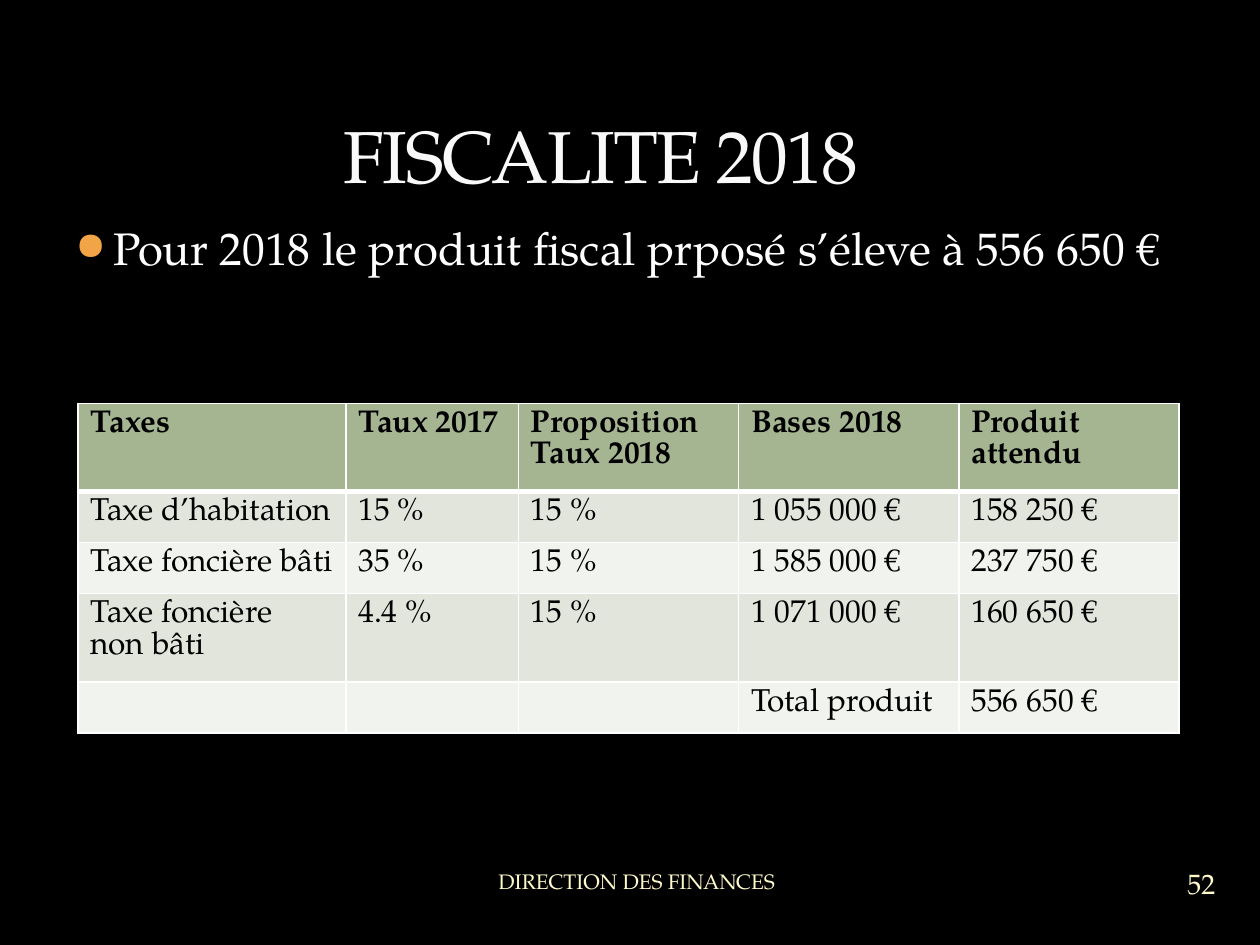
from lxml import etree
from pptx import Presentation
from pptx import util as u
from pptx.dml import color
from pptx.enum import text
from pptx.oxml import ns

FONT = "TeX Gyre Pagella"
HUES = {
    "back": "000000", "title": "F9F9F9", "edge": "3C4422", "body": "FFFFFF",
    "dot": "F3A447", "foot": "FEFAC9", "ink": "000000", "rule": "FFFFFF",
    "head": "A5B592", "odd": "E1E5DC", "even": "F0F3EE",
}
ROWS = [
    ["Taxes", "Taux 2017", "Proposition Taux 2018", "Bases 2018", "Produit attendu"],
    ["Taxe d’habitation", "15 %", "15 %", "1 055 000 €", "158 250 €"],
    ["Taxe foncière bâti", "35 %", "15 %", "1 585 000 €", "237 750 €"],
    ["Taxe foncière non bâti", "4.4 %", "15 %", "1 071 000 €", "160 650 €"],
    ["", "", "", "Total produit", "556 650 €"],
]
WIDTHS = [5.4, 3.48, 4.44, 4.44, 4.44]
HEIGHTS = [1.49, 1.03, 1.03, 1.52, 1.03]


def hue(name):
    """Return the named colour."""
    return color.RGBColor.from_string(HUES[name])


def node(top, tag, **attrs):
    """Append a drawing element with its attributes."""
    item = etree.SubElement(top, ns.qn("a:" + tag))
    for key, value in attrs.items():
        item.set(key, str(value))
    return item


def add_run(para, words, size, tint, bold=False):
    """Add one formatted run to a paragraph."""
    run = para.add_run()
    run.text = words
    font = run.font
    font.name, font.size, font.bold = FONT, u.Pt(size), bold
    font.color.rgb = hue(tint)
    return run


def place(shape, left, top, width, height):
    """Set the position and size of a shape."""
    shape.left, shape.top = u.Cm(left), u.Cm(top)
    shape.width, shape.height = u.Cm(width), u.Cm(height)


def add_title(slide, words):
    """Fill and format the title placeholder."""
    title = slide.shapes.title
    place(title, 1.27, 1.96, 22.86, 2.16)
    frame = title.text_frame
    frame.vertical_anchor = text.MSO_ANCHOR.BOTTOM
    para = frame.paragraphs[0]
    para.alignment = text.PP_ALIGN.LEFT
    para._p.get_or_add_pPr().set("marL", str(u.Cm(5.4)))
    props = add_run(para, words, 42, "title")._r.get_or_add_rPr()
    props.set("spc", "-100")
    line = node(props, "ln", w=u.Pt(0.25))
    tint = node(node(line, "solidFill"), "srgbClr", val=HUES["edge"])
    node(tint, "alpha", val=25000)
    props.insert(0, line)


def add_text(slide, box, words, size, tint, align, anchor, inset=None):
    """Add a text box with one paragraph and return the paragraph."""
    shape = slide.shapes.add_textbox(*map(u.Cm, box))
    frame = shape.text_frame
    frame.word_wrap = True
    frame.vertical_anchor = anchor
    if inset is not None:
        frame.margin_left = frame.margin_right = u.Cm(inset)
        frame.margin_top = frame.margin_bottom = u.Cm(inset)
    para = frame.paragraphs[0]
    para.alignment = align
    add_run(para, words, size, tint)
    return para


def add_dot(para):
    """Give a paragraph a round bullet with a hanging indent."""
    para.space_before = u.Pt(6)
    props = para._p.get_or_add_pPr()
    props.set("marL", str(u.Cm(0.76)))
    props.set("indent", str(u.Cm(-0.76)))
    node(node(props, "buClr"), "srgbClr", val=HUES["dot"])
    node(props, "buSzPct", val=85000)
    node(props, "buChar", char="●")


def set_cell(cell, words, row):
    """Write, fill and frame one table cell."""
    if words:
        add_run(cell.text_frame.paragraphs[0], words, 18, "ink", row == 0)
    props = cell._tc.get_or_add_tcPr()
    for side in "LRTB":
        thick = 3 if (row, side) in ((0, "B"), (1, "T")) else 1
        line = node(props, "ln" + side, w=u.Pt(thick))
        node(node(line, "solidFill"), "srgbClr", val=HUES["rule"])
    cell.fill.solid()
    tint = "head" if row == 0 else "odd" if row % 2 else "even"
    cell.fill.fore_color.rgb = hue(tint)


def add_grid(slide):
    """Add the table of taxes."""
    box = (1.57, 8.13, sum(WIDTHS), sum(HEIGHTS))
    grid = slide.shapes.add_table(len(ROWS), len(WIDTHS), *map(u.Cm, box)).table
    for col, width in zip(grid.columns, WIDTHS):
        col.width = u.Cm(width)
    for row, height in zip(grid.rows, HEIGHTS):
        row.height = u.Cm(height)
    for i, words in enumerate(ROWS):
        for j, word in enumerate(words):
            set_cell(grid.cell(i, j), word, i)


def main():
    """Build and save the slide."""
    deck = Presentation()
    deck.slide_width, deck.slide_height = u.Cm(25.4), u.Cm(19.05)
    slide = deck.slides.add_slide(deck.slide_layouts[5])
    slide.background.fill.solid()
    slide.background.fill.fore_color.rgb = hue("back")
    align, anchor = text.PP_ALIGN, text.MSO_ANCHOR
    add_dot(add_text(slide, (1.27, 4.32, 22.86, 13.23),
                     "Pour 2018 le produit fiscal prposé s’éleve à 556 650 €",
                     26, "body", align.LEFT, anchor.TOP))
    add_text(slide, (23.37, 17.17, 1.7, 1.27), "52", 16, "foot",
             align.CENTER, anchor.MIDDLE, 0)
    add_text(slide, (5.92, 17.22, 9.96, 1.07), "DIRECTION DES FINANCES", 12, "foot",
             align.RIGHT, anchor.MIDDLE)
    add_title(slide, "FISCALITE 2018")
    add_grid(slide)
    deck.save("out.pptx")


if __name__ == "__main__":
    main()
